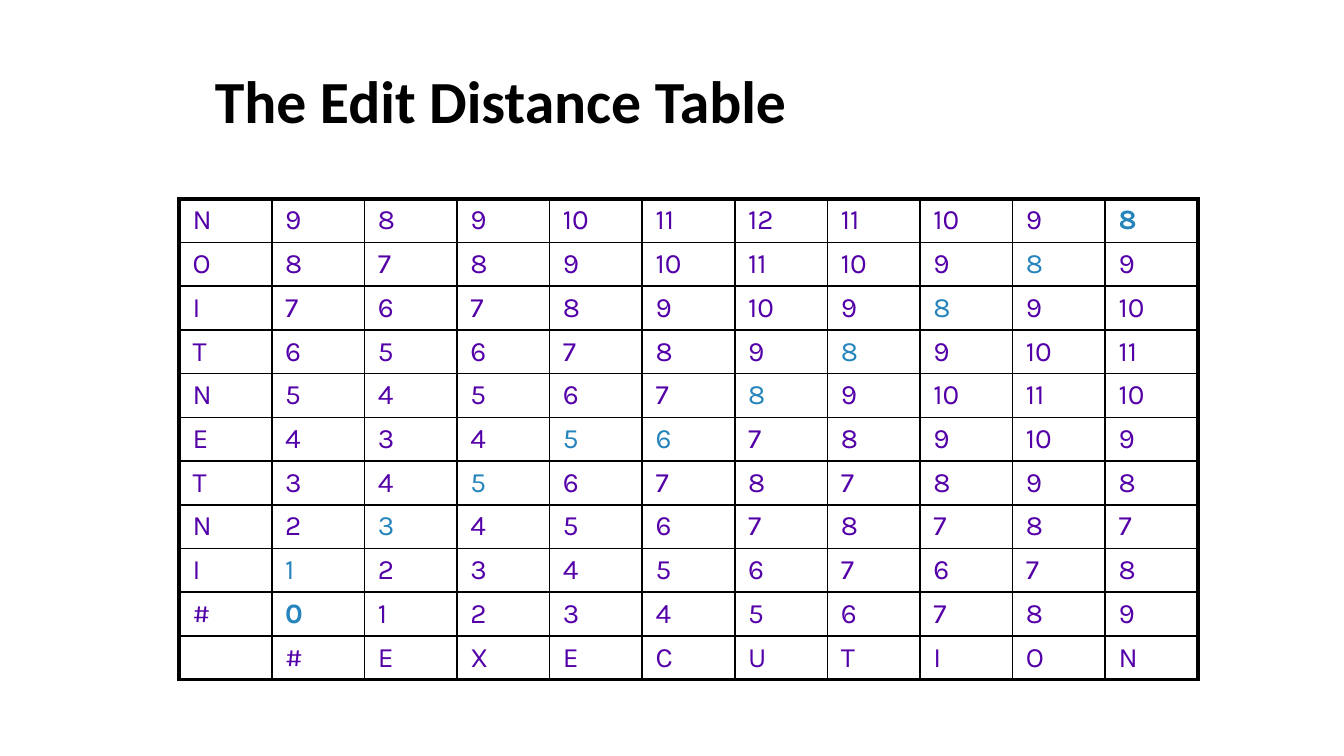
import pptx
import pptx.util
import pptx.dml.color
import pptx.enum.text
import pptx.oxml.ns
import lxml.etree


def tint(code):
    return pptx.dml.color.RGBColor.from_string(code)


def edge(cell, side, width, spot):
    props = cell._tc.get_or_add_tcPr()
    line = lxml.etree.Element(pptx.oxml.ns.qn("a:ln" + side), w=str(pptx.util.Pt(width)))
    fill = lxml.etree.SubElement(line, pptx.oxml.ns.qn("a:solidFill"))
    lxml.etree.SubElement(fill, pptx.oxml.ns.qn("a:srgbClr"), val="000000")
    props.insert(spot, line)


deck = pptx.Presentation()
deck.slide_width = pptx.util.Inches(10)
deck.slide_height = deck.slide_width * 9 // 16
wide, high = deck.slide_width / 100, deck.slide_height / 100
slide = deck.slides.add_slide(deck.slide_layouts[6])

rows = [line.split() for line in """N 9 8 9 10 11 12 11 10 9 8
O 8 7 8 9 10 11 10 9 8 9
I 7 6 7 8 9 10 9 8 9 10
T 6 5 6 7 8 9 8 9 10 11
N 5 4 5 6 7 8 9 10 11 10
E 4 3 4 5 6 7 8 9 10 9
T 3 4 5 6 7 8 7 8 9 8
N 2 3 4 5 6 7 8 7 8 7
I 1 2 3 4 5 6 7 6 7 8
# 0 1 2 3 4 5 6 7 8 9""".splitlines()]
rows.append([""] + list("#EXECUTION"))
ends = {(0, 10), (9, 1)}
trail = ends | {(1, 9), (2, 8), (3, 7), (4, 6), (5, 5), (5, 4), (6, 3), (7, 2), (8, 1)}
last = len(rows) - 1

frame = slide.shapes.add_table(
    len(rows), len(rows), int(wide * 13.33), int(high * 26.3), int(wide * 75.8), int(high * 63.64))
grid = frame.table
for flag in ("first_row", "horz_banding"):
    setattr(grid, flag, False)

for r, row in enumerate(rows):
    for c, word in enumerate(row):
        cell = grid.cell(r, c)
        pads = {"margin_left": 0.1, "margin_right": 0.1, "margin_top": 0.04, "margin_bottom": 0.04}
        for name, size in pads.items():
            setattr(cell, name, pptx.util.Inches(size))
        cell.fill.background()
        rims = {"L": c == 0, "R": c == last, "T": r == 0, "B": r == last}
        for spot, (side, rim) in enumerate(rims.items()):
            edge(cell, side, 2.25 if rim else 1, spot)
        para = cell.text_frame.paragraphs[0]
        para.text = word
        look = {"name": "Karla", "size": pptx.util.Pt(15), "bold": (r, c) in ends}
        for font in [para.font] + [run.font for run in para.runs]:
            for name, value in look.items():
                setattr(font, name, value)
            font.color.rgb = tint("2584BB" if (r, c) in trail else "5400A8")

title = slide.shapes.add_textbox(
    int(wide * 15), int(high * 7.5), int(wide * 81.7), int(high * 14.4))
body = title.text_frame
for name, value in {"word_wrap": True, "vertical_anchor": pptx.enum.text.MSO_ANCHOR.TOP}.items():
    setattr(body, name, value)
run = body.paragraphs[0].add_run()
run.text = "The Edit Distance Table"
for name, value in {"name": "Calibri", "size": pptx.util.Pt(32), "bold": True}.items():
    setattr(run.font, name, value)
run.font.color.rgb = tint("000000")

deck.save("out.pptx")
